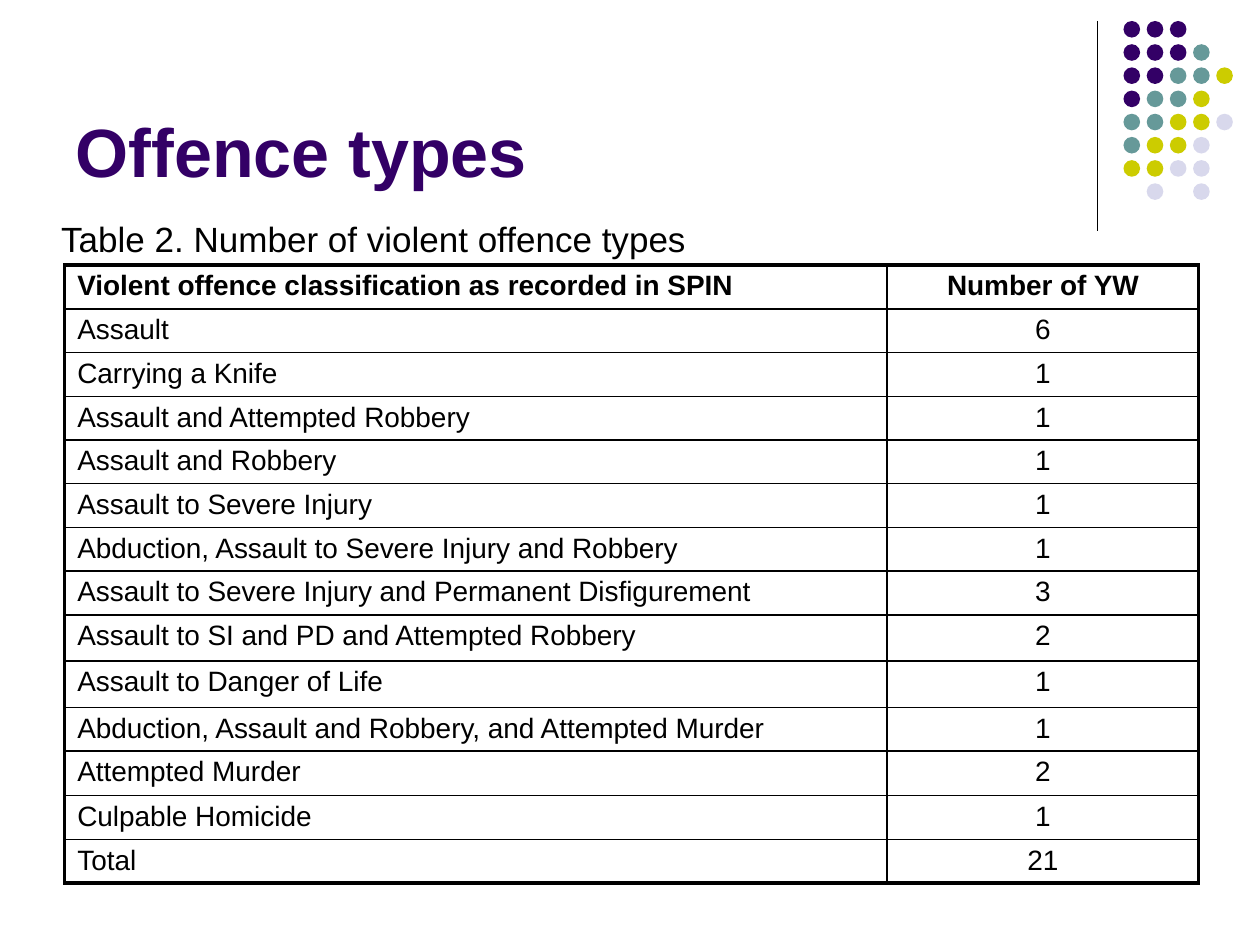
from dataclasses import dataclass

from lxml import etree
from pptx import Presentation
from pptx.dml.color import RGBColor
from pptx.enum import shapes, text
from pptx.oxml import ns
from pptx.util import Pt

COLOURS = {
    "ink": "000000",
    "purple": "330066",
    "teal": "669999",
    "lime": "CCCC00",
    "lilac": "D8D8EC",
}
FONT = "Arial"
THICK, THIN = 2.25, 1

# One string per row of dots; each letter picks a colour, a space leaves a gap
DOT_ROWS = ["PPP", "PPPT", "PPTTY", "PTTY", "TTYYL", "TYYL", "YYLL", " L L"]
DOT_COLOURS = {"P": "purple", "T": "teal", "Y": "lime", "L": "lilac"}
DOT_LEFT, DOT_TOP, DOT_PITCH, DOT_SIZE = 642, 12, 13.25, 9.5


@dataclass
class Offence:
    name: str
    count: str
    height: float = 25
    bold: bool = False


OFFENCES = [
    Offence("Violent offence classification as recorded in SPIN", "Number of YW", bold=True),
    Offence("Assault", "6"),
    Offence("Carrying a Knife", "1"),
    Offence("Assault and Attempted Robbery", "1"),
    Offence("Assault and Robbery", "1"),
    Offence("Assault to Severe Injury", "1"),
    Offence("Abduction, Assault to Severe Injury and Robbery", "1"),
    Offence("Assault to Severe Injury and Permanent Disfigurement", "3"),
    Offence("Assault to SI and PD and Attempted Robbery", "2", 26.5),
    Offence("Assault to Danger of Life", "1", 26.5),
    Offence("Abduction, Assault and Robbery, and Attempted Murder", "1"),
    Offence("Attempted Murder", "2", 25.5),
    Offence("Culpable Homicide", "1"),
    Offence("Total", "21"),
]


def colour(name: str) -> RGBColor:
    return RGBColor.from_string(COLOURS[name])


def format_text(paragraph, size: float, name: str = "ink", bold: bool = False) -> None:
    for span in paragraph.runs:
        span.font.name = FONT
        span.font.size = Pt(size)
        span.font.bold = bold
        span.font.color.rgb = colour(name)


def draw_rule(page, x: float, top: float, bottom: float) -> None:
    rule = page.shapes.add_connector(
        shapes.MSO_CONNECTOR.STRAIGHT, Pt(x), Pt(top), Pt(x), Pt(bottom))
    rule.line.color.rgb = colour("ink")
    rule.line.width = Pt(0.75)
    etree.SubElement(rule._element.spPr, ns.qn("a:effectLst"))


def draw_dot(page, row: int, column: int, name: str) -> None:
    dot = page.shapes.add_shape(
        shapes.MSO_SHAPE.OVAL,
        Pt(DOT_LEFT + column * DOT_PITCH), Pt(DOT_TOP + row * DOT_PITCH),
        Pt(DOT_SIZE), Pt(DOT_SIZE))
    dot.shadow.inherit = False
    dot.fill.solid()
    dot.fill.fore_color.rgb = colour(name)
    dot.line.fill.background()


def set_borders(cell, widths: dict[str, float]) -> None:
    properties = cell._tc.get_or_add_tcPr()
    for side, width in widths.items():
        line = etree.SubElement(properties, ns.qn(f"a:ln{side}"), w=str(Pt(width)))
        fill = etree.SubElement(line, ns.qn("a:solidFill"))
        etree.SubElement(fill, ns.qn("a:srgbClr"), val=COLOURS["ink"])


def draw_table(page, left: float, top: float, widths: list[float],
               offences: list[Offence]) -> None:
    table = page.shapes.add_table(
        len(offences), len(widths), Pt(left), Pt(top),
        Pt(sum(widths)), Pt(sum(offence.height for offence in offences))).table
    table.first_row = False
    table.horz_banding = False
    for column, width in zip(table.columns, widths):
        column.width = Pt(width)

    last = len(offences) - 1
    for index, offence in enumerate(offences):
        table.rows[index].height = Pt(offence.height)
        for side, words in enumerate((offence.name, offence.count)):
            cell = table.cell(index, side)
            cell.margin_top = cell.margin_bottom = Pt(3.2)
            set_borders(cell, {
                "L": THIN if side else THICK,
                "R": THICK if side else THIN,
                "T": THICK if index == 0 else THIN,
                "B": THICK if index == last else THIN,
            })
            cell.fill.background()
            cell.text_frame.text = words
            paragraph = cell.text_frame.paragraphs[0]
            paragraph.alignment = text.PP_ALIGN.CENTER if side else text.PP_ALIGN.LEFT
            format_text(paragraph, 16, bold=offence.bold)


def draw_title(page, words: str) -> None:
    title = page.shapes.title
    title.left, title.top, title.width, title.height = Pt(36), Pt(10), Pt(594), Pt(103)
    frame = title.text_frame
    frame.text = words
    frame.auto_size = text.MSO_AUTO_SIZE.NONE
    frame.vertical_anchor = text.MSO_ANCHOR.BOTTOM
    frame.paragraphs[0].alignment = text.PP_ALIGN.LEFT
    format_text(frame.paragraphs[0], 39, "purple", bold=True)


def draw_caption(page, words: str) -> None:
    box = page.shapes.add_textbox(Pt(0), Pt(116.5), Pt(705.5), Pt(55.5))
    frame = box.text_frame
    frame.word_wrap = True
    frame.margin_left = Pt(35)
    frame.margin_top = Pt(8)
    frame.text = words
    format_text(frame.paragraphs[0], 20)


def main() -> None:
    deck = Presentation()
    deck.slide_width, deck.slide_height = Pt(720), Pt(540)
    page = deck.slides.add_slide(deck.slide_layouts[5])

    # Corner ornament
    draw_rule(page, 627, 12, 132)
    for row, letters in enumerate(DOT_ROWS):
        for column, letter in enumerate(letters):
            if letter in DOT_COLOURS:
                draw_dot(page, row, column, DOT_COLOURS[letter])

    # Heading, table and its caption
    draw_title(page, "Offence types")
    draw_table(page, 37, 151.5, [470, 178], OFFENCES)
    draw_caption(page, "Table 2. Number of violent offence types")

    deck.save("out.pptx")


if __name__ == "__main__":
    main()
